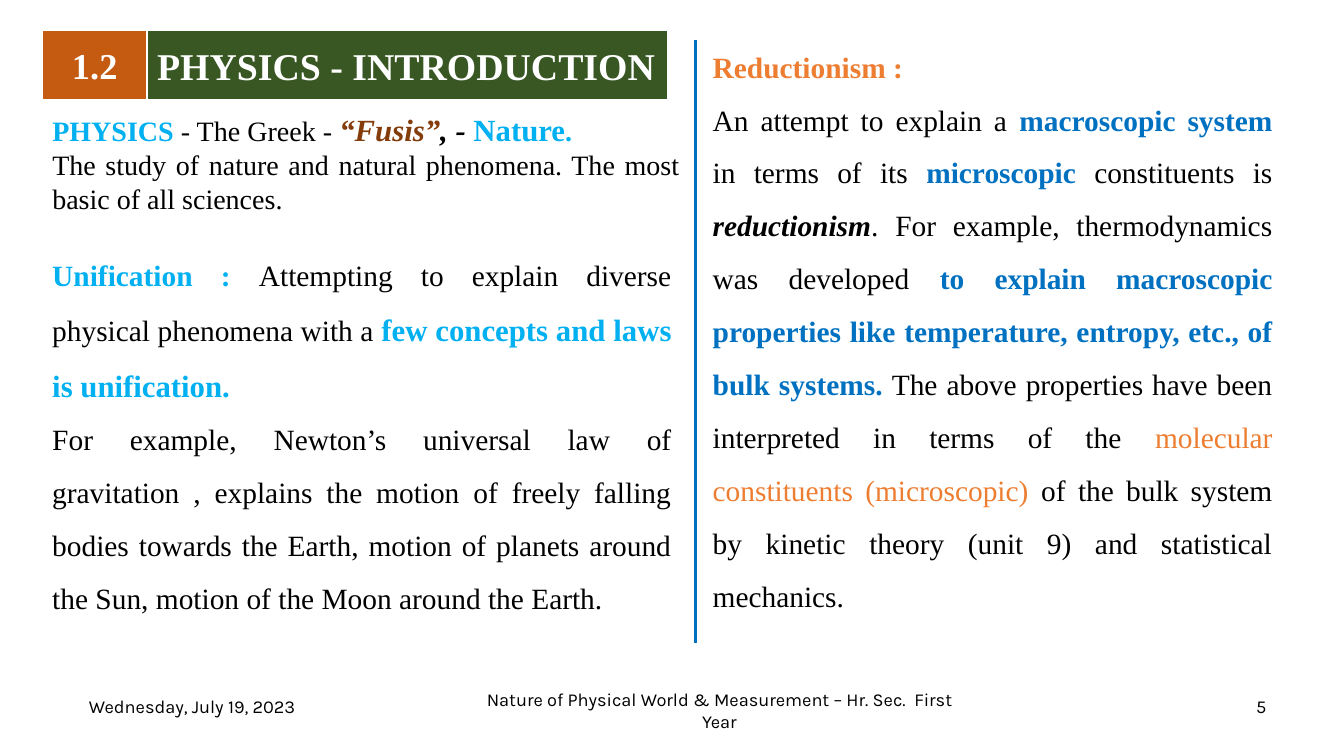
"""Build the slide that introduces physics, unification and reductionism."""
from pptx import Presentation
from pptx.dml.color import RGBColor
from pptx.enum.shapes import MSO_CONNECTOR, MSO_SHAPE
from pptx.enum.text import MSO_ANCHOR, PP_ALIGN
from pptx.oxml.ns import qn
from pptx.util import Pt
from lxml.etree import SubElement

PX = 9144
BLACK, WHITE, SKY, BLUE, ORANGE, BROWN = "000000", "FFFFFF", "00B0F0", "0070C0", "ED7D31", "843C0B"


def color(hex_string):
    return RGBColor.from_string(hex_string)


def write(shape, paragraphs, size, font="Times New Roman", align=PP_ALIGN.JUSTIFY,
          anchor=MSO_ANCHOR.TOP, spacing=None):
    """Fill a shape with paragraphs of (text, colour, style letters, optional size) runs."""
    frame = shape.text_frame
    frame.word_wrap = True
    frame.vertical_anchor = anchor
    for index, runs in enumerate(paragraphs):
        paragraph = frame.add_paragraph() if index else frame.paragraphs[0]
        paragraph.alignment = align
        paragraph.line_spacing = spacing
        for text, run_color, style, *own_size in runs:
            run = paragraph.add_run()
            run.text = text
            run.font.name = font
            run.font.size = Pt(own_size[0] if own_size else size)
            run.font.bold = "b" in style
            run.font.italic = "i" in style
            run.font.color.rgb = color(run_color)


presentation = Presentation()
presentation.slide_width = 1333 * PX
presentation.slide_height = 750 * PX
slide = presentation.slides.add_slide(presentation.slide_layouts[6])

footers = [
    ("Wednesday, July 19, 2023", 71, 681, 239),
    ("5", 1230, 681, 42),
    ("Nature of Physical World & Measurement – Hr. Sec.  First Year", 455, 685, 517),
]
for text, left, top, width in footers:
    footer = slide.shapes.add_textbox(left * PX, top * PX, width * PX, 40 * PX)
    write(footer, [[(text, BLACK, "")]], 13, font="Karla", align=PP_ALIGN.CENTER,
          anchor=MSO_ANCHOR.MIDDLE)

headings = [
    ("1.2", 42, 104, "C55A11", 26, PP_ALIGN.CENTER),
    ("PHYSICS - INTRODUCTION", 146, 517, "385723", 27, PP_ALIGN.LEFT),
]
for text, left, width, fill, size, align in headings:
    heading = slide.shapes.add_shape(MSO_SHAPE.RECTANGLE, left * PX, 30 * PX, width * PX, 69 * PX)
    heading.shadow.inherit = False
    heading.fill.solid()
    heading.fill.fore_color.rgb = color(fill)
    heading.line.color.rgb = color(WHITE)
    heading.line.width = Pt(1.5)
    write(heading, [[(text, WHITE, "b")]], size, align=align, anchor=MSO_ANCHOR.MIDDLE)

divider = slide.shapes.add_connector(MSO_CONNECTOR.STRAIGHT, 690 * PX, 40 * PX, 690 * PX, 638 * PX)
divider.line.color.rgb = color(BLUE)
divider.line.width = Pt(2.25)
SubElement(divider._element.spPr, qn("a:effectLst"))

definition = [
    [
        ("PHYSICS", SKY, "b"),
        (" - The Greek - ", BLACK, ""),
        ("“Fusis”", BROWN, "bi", 22),
        (", - ", BLACK, "bi", 22),
        ("Nature", SKY, "b", 22),
        (". ", SKY, "b"),
    ],
    [("The study of nature and natural phenomena. The most basic of all sciences. ", BLACK, "")],
]
unification = [
    [
        ("Unification : ", SKY, "b"),
        ("Attempting to explain diverse physical phenomena with a ", BLACK, ""),
        ("few concepts and laws is unification.", SKY, "b", 22),
        (" ", BLACK, ""),
    ],
    [("For example, Newton’s universal law of gravitation , explains the motion of freely "
      "falling bodies towards the Earth, motion of planets around the Sun, motion of the Moon "
      "around the Earth. ", BLACK, "")],
]
reductionism = [
    [("Reductionism :", ORANGE, "b")],
    [
        ("An attempt to explain a ", BLACK, ""),
        ("macroscopic system", BLUE, "b"),
        (" in terms of its ", BLACK, ""),
        ("microscopic", BLUE, "b"),
        (" constituents is ", BLACK, ""),
        ("reductionism", BLACK, "bi"),
        (". For example, thermodynamics was developed ", BLACK, ""),
        ("to explain macroscopic properties like temperature, entropy, etc., of bulk systems. ",
         BLUE, "b"),
        ("The above properties have been interpreted in terms of the ", BLACK, ""),
        ("molecular constituents (microscopic) ", ORANGE, ""),
        ("of the bulk system by kinetic theory (unit 9) and statistical mechanics. ", BLACK, ""),
    ],
]
bodies = [
    (definition, 42, 105, 642, 118, 20, None),
    (unification, 42, 233, 634, 439, 21, 1.5),
    (reductionism, 697, 26, 575, 646, 21, 1.5),
]
for paragraphs, left, top, width, height, size, spacing in bodies:
    body = slide.shapes.add_textbox(left * PX, top * PX, width * PX, height * PX)
    write(body, paragraphs, size, spacing=spacing)

presentation.save("out.pptx")
